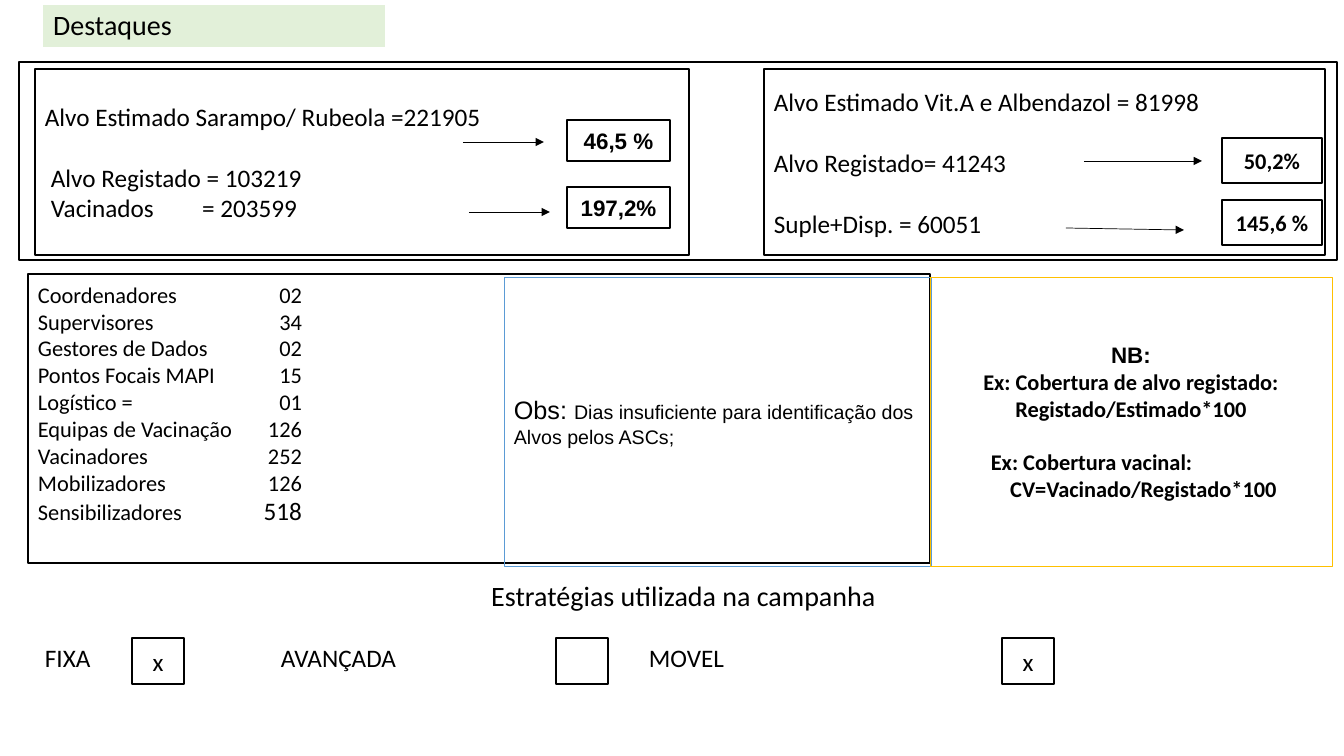
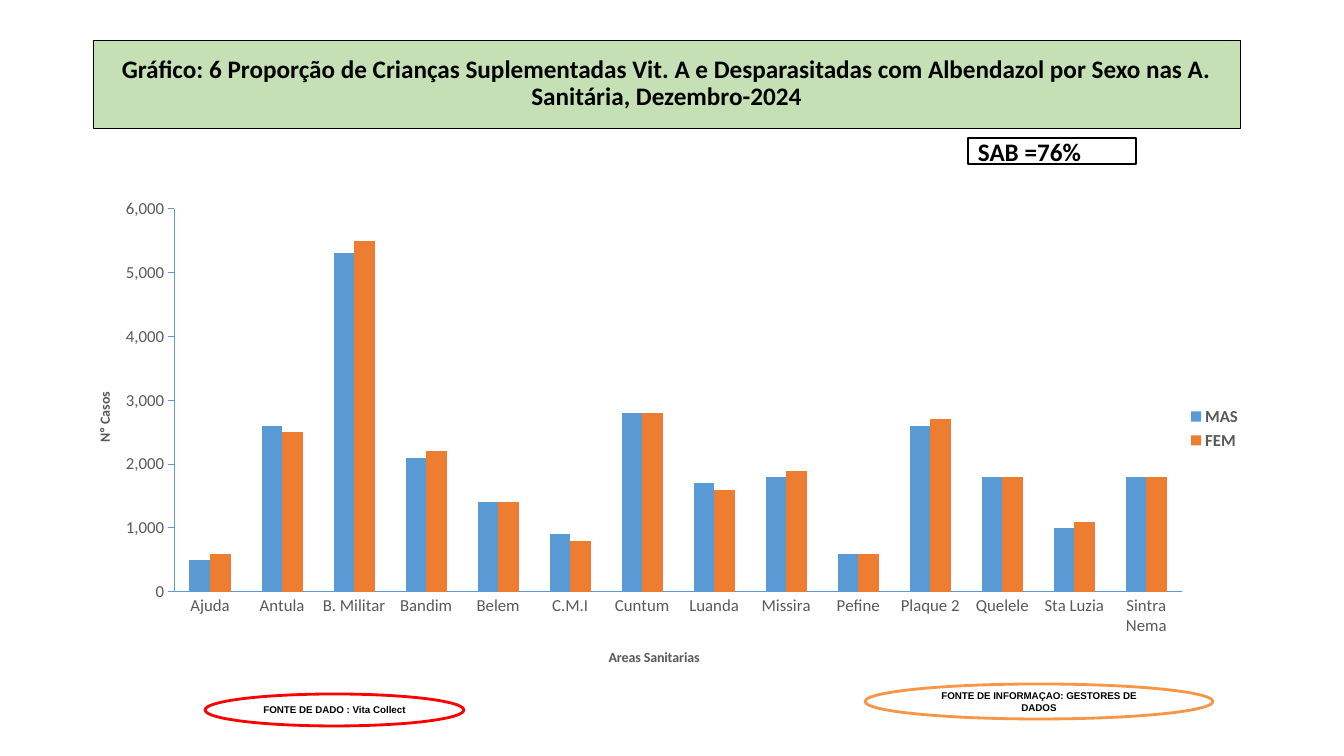
from lxml import etree
from pptx import Presentation, util as u
from pptx.chart.data import CategoryChartData
from pptx.dml.color import RGBColor
from pptx.enum import chart as charts, shapes, text
from pptx.oxml import parse_xml
from pptx.oxml.ns import nsdecls, qn

SCALE = 914400 / 100.8  # EMU in one px
BLACK, WHITE, GREY = "000000", "FFFFFF", "595959"
BLUE, ORANGE = "5B9BD5", "ED7D31"
LEFT, CENTER = text.PP_ALIGN.LEFT, text.PP_ALIGN.CENTER
RECT, OVAL = shapes.MSO_SHAPE.RECTANGLE, shapes.MSO_SHAPE.OVAL


def px(*lengths):
    return [u.Emu(round(length * SCALE)) for length in lengths]


def color(code):
    return RGBColor.from_string(code)


def style_font(font, size, code=BLACK, bold=False, name="Calibri"):
    font.name, font.size, font.bold = name, u.Pt(size), bold
    font.color.rgb = color(code)


class Page:
    """Holds the deck, the current slide and the shared style."""

    def __init__(self):
        self.deck = Presentation()
        self.deck.slide_width, self.deck.slide_height = px(1344, 756)
        self.slide = None

    def new_slide(self):
        self.slide = self.deck.slides.add_slide(self.deck.slide_layouts[5])

    def paint(self, shape, fill, line, weight):
        if fill:
            shape.fill.solid()
            shape.fill.fore_color.rgb = color(fill)
        else:
            shape.fill.background()
        if line:
            shape.line.color.rgb = color(line)
            shape.line.width = u.Pt(weight)
        else:
            shape.line.fill.background()

    def prepare_text(self, shape):
        frame = shape.text_frame
        frame.word_wrap = True
        frame.auto_size = text.MSO_AUTO_SIZE.NONE
        frame.vertical_anchor = text.MSO_ANCHOR.MIDDLE

    def title(self, place, words, fill, line=None, size=20, bold=False, align=LEFT):
        shape = self.slide.shapes.title
        shape.left, shape.top, shape.width, shape.height = px(*place)
        self.paint(shape, fill, line, 0.5)
        self.prepare_text(shape)
        para = self.para(shape, words, size, bold=bold, align=align)
        para.line_spacing = 0.9

    def box(self, place, fill=WHITE, line=BLACK, weight=1, kind=RECT):
        shape = self.slide.shapes.add_shape(kind, *px(*place))
        shape.shadow.inherit = False
        self.paint(shape, fill, line, weight)
        self.prepare_text(shape)
        return shape

    def label(self, place, words, size, font="Calibri", bold=True, align=CENTER, **look):
        self.para(self.box(place, **look), words, size, font, bold, align)

    def text_box(self, place):
        shape = self.slide.shapes.add_textbox(*px(*place))
        self.prepare_text(shape)
        return shape

    def span(self, para, words, size, font="Calibri", bold=False):
        run = para.add_run()
        run.text = words
        style_font(run.font, size, bold=bold, name=font)

    def para(self, shape, words, size, font="Calibri", bold=False, align=LEFT,
             before=0, indent=0, tabs=()):
        """Add a paragraph; before is in points, tabs are (px, alignment) pairs."""
        frame = shape.text_frame
        para = frame.paragraphs[0]
        if para.runs:
            para = frame.add_paragraph()
        para.alignment = align
        para.space_before = u.Pt(before)
        props = para._p.get_or_add_pPr()
        if indent:
            props.set("marL", str(px(indent)[0]))
            props.set("indent", "0")
        if tabs:
            stops = etree.SubElement(props, qn("a:tabLst"))
            for position, side in tabs:
                etree.SubElement(stops, qn("a:tab"), pos=str(px(position)[0]), algn=side)
        self.span(para, words, size, font, bold)
        return para

    def arrow(self, x1, y1, x2, y2):
        line = self.slide.shapes.add_connector(
            shapes.MSO_CONNECTOR.STRAIGHT, *px(x1, y1, x2, y2))
        line.line.color.rgb = color(BLACK)
        line.line.width = u.Pt(0.5)
        etree.SubElement(line.line._get_or_add_ln(), qn("a:tailEnd"), type="triangle")
        etree.SubElement(line._element.spPr, qn("a:effectLst"))

    def axis(self, axis, title, tick):
        axis.has_major_gridlines = False
        axis.major_tick_mark = tick
        axis.minor_tick_mark = charts.XL_TICK_MARK.NONE
        axis.format.line.color.rgb = color(BLUE)
        axis.format.line.width = u.Pt(0.75)
        style_font(axis.tick_labels.font, 12, GREY)
        run = axis.axis_title.text_frame.paragraphs[0].add_run()
        run.text = title
        style_font(run.font, 10, GREY, True)

    def column_chart(self, place, categories, series, cat_title, val_title):
        data = CategoryChartData(number_format="#,##0")
        data.categories = categories
        for name, values, _ in series:
            data.add_series(name, values)
        chart = self.slide.shapes.add_chart(
            charts.XL_CHART_TYPE.COLUMN_CLUSTERED, *px(*place), data).chart
        style_font(chart.font, 10)
        chart.has_title = False
        chart.has_legend = True
        chart.legend.position = charts.XL_LEGEND_POSITION.RIGHT
        chart.legend.include_in_layout = False
        style_font(chart.legend.font, 12, GREY, True)
        plot = chart.plots[0]
        plot.gap_width, plot.overlap = 150, 0
        plot.vary_by_categories = False
        for item, (_, _, fill) in zip(plot.series, series):
            item.format.fill.solid()
            item.format.fill.fore_color.rgb = color(fill)
            item.invert_if_negative = False
        self.axis(chart.category_axis, cat_title, charts.XL_TICK_MARK.NONE)
        self.axis(chart.value_axis, val_title, charts.XL_TICK_MARK.OUTSIDE)
        scale = chart.value_axis
        scale.minimum_scale, scale.maximum_scale, scale.major_unit = 0, 6000, 1000
        scale.tick_labels.number_format = "#,##0"
        scale.tick_labels.number_format_is_linked = False
        self.place_plot(chart, x=0.07, y=0.07, w=0.87, h=0.75)

    def place_plot(self, chart, **parts):
        """Fix the inner plot area as fractions of the chart."""
        sizes = "".join(f'<c:{key} val="{value}"/>' for key, value in parts.items())
        layout = parse_xml(
            f'<c:layout {nsdecls("c")}><c:manualLayout><c:layoutTarget val="inner"/>'
            f'<c:xMode val="edge"/><c:yMode val="edge"/>{sizes}'
            '</c:manualLayout></c:layout>')
        area = chart._chartSpace.chart.plotArea
        for old in area.findall(qn("c:layout")):
            area.remove(old)
        area.insert(0, layout)


def highlights(page):
    page.new_slide()
    page.title((43, 5, 342, 42), "Destaques", "E2F0D9")

    team = page.box((28, 274, 902, 289))
    team.text_frame.margin_bottom = px(35)[0]
    staff = [("Coordenadores", "02"), ("Supervisores", "34"), ("Gestores de Dados", "02"),
             ("Pontos Focais MAPI", "15"), ("Logístico =", "01"),
             ("Equipas de Vacinação", "126"), ("Vacinadores", "252"),
             ("Mobilizadores", "126"), ("Sensibilizadores", "518")]
    for role, count in staff:
        para = page.para(team, role + "\t", 16, tabs=[(264, "r")])
        page.span(para, count, 18 if role == "Sensibilizadores" else 16)

    page.box((19, 62, 1318, 198))
    measles = page.box((35, 69, 654, 186))
    page.para(measles, "Alvo Estimado Sarampo/ Rubeola =221905", 18)
    page.para(measles, "Alvo Registado = 103219", 18, before=22, indent=6)
    page.para(measles, "Vacinados\t= 203599", 18, indent=6, tabs=[(149, "l")])
    vitamin = page.box((764, 69, 561, 186))
    page.para(vitamin, "Alvo Estimado Vit.A e Albendazol = 81998", 18)
    for words in ("Alvo Registado= 41243", "Suple+Disp. = 60051"):
        page.para(vitamin, words, 18, before=22)

    for top, rate in ((120, "46,5 %"), (187, "197,2%")):
        page.label((567, top, 103, 41), rate, 16, "Arial")
    for top, rate in ((138, "50,2%"), (200, "145,6 %")):
        page.label((1222, top, 100, 45), rate, 16)
    for ends in ((463, 142, 544, 142), (469, 212, 550, 212),
                 (1084, 161, 1202, 161), (1066, 228, 1184, 230)):
        page.arrow(*ends)

    remark = page.box((504, 277, 427, 289), None, BLUE, 0.5)
    para = page.para(remark, "Obs: ", 18, "Arial")
    page.span(para, "Dias insuficiente para identificação dos Alvos pelos ASCs;", 14, "Arial")

    formulas = page.box((930, 277, 402, 289), None, "FFC000", 0.5)
    page.para(formulas, "NB:", 16, "Arial", True, CENTER)
    for words in ("Ex: Cobertura de alvo registado:", "Registado/Estimado*100"):
        page.para(formulas, words, 16, bold=True, align=CENTER)
    page.para(formulas, "Ex: Cobertura vacinal:", 16, bold=True, before=19, indent=51)
    page.para(formulas, "CV=Vacinado/Registado*100", 16, bold=True, align=CENTER, indent=25)

    strategy = page.text_box((35, 565, 1297, 125))
    heading = page.para(strategy, "Estratégias utilizada na campanha", 20, align=CENTER)
    choices = page.para(strategy, "FIXA\tAVANÇADA\tMOVEL", 18, before=24,
                        tabs=[(236, "l"), (604, "l")])
    heading.line_spacing = choices.line_spacing = 0.9
    for left, mark in ((132, "x"), (556, ""), (1002, "x")):
        check = page.box((left, 638, 52, 46))
        if mark:
            page.para(check, mark, 18, align=CENTER)


def sex_chart(page):
    page.new_slide()
    page.title((93, 40, 1147, 88),
               "Gráfico: 6 Proporção de Crianças Suplementadas Vit. A e Desparasitadas "
               "com Albendazol por Sexo nas A. Sanitária, Dezembro-2024",
               "C5E0B4", BLACK, 18, True, CENTER)
    page.label((968, 138, 168, 26), "SAB =76%", 18, align=LEFT)
    page.label((205, 694, 259, 32), "FONTE DE DADO : Vita Collect", 7, "Arial",
               fill=None, line="FF0000", weight=2, kind=OVAL)
    page.label((865, 684, 348, 35), "FONTE DE INFORMAÇAO: GESTORES DE DADOS", 7, "Arial",
               line="F79646", weight=2, kind=OVAL)
    areas = ["Ajuda", "Antula", "B. Militar", "Bandim", "Belem", "C.M.I", "Cuntum",
             "Luanda", "Missira", "Pefine", "Plaque 2", "Quelele", "Sta Luzia",
             "Sintra Nema"]
    boys = [500, 2600, 5300, 2100, 1400, 900, 2800, 1700, 1800, 600, 2600, 1800, 1000, 1800]
    girls = [600, 2500, 5500, 2200, 1400, 800, 2800, 1600, 1900, 600, 2700, 1800, 1100, 1800]
    page.column_chart((93, 173, 1159, 511), areas,
                      [("MAS", boys, BLUE), ("FEM", girls, ORANGE)],
                      "Areas Sanitarias", "Nº Casos")


def main():
    page = Page()
    highlights(page)
    sex_chart(page)
    page.deck.save("out.pptx")


if __name__ == "__main__":
    main()
